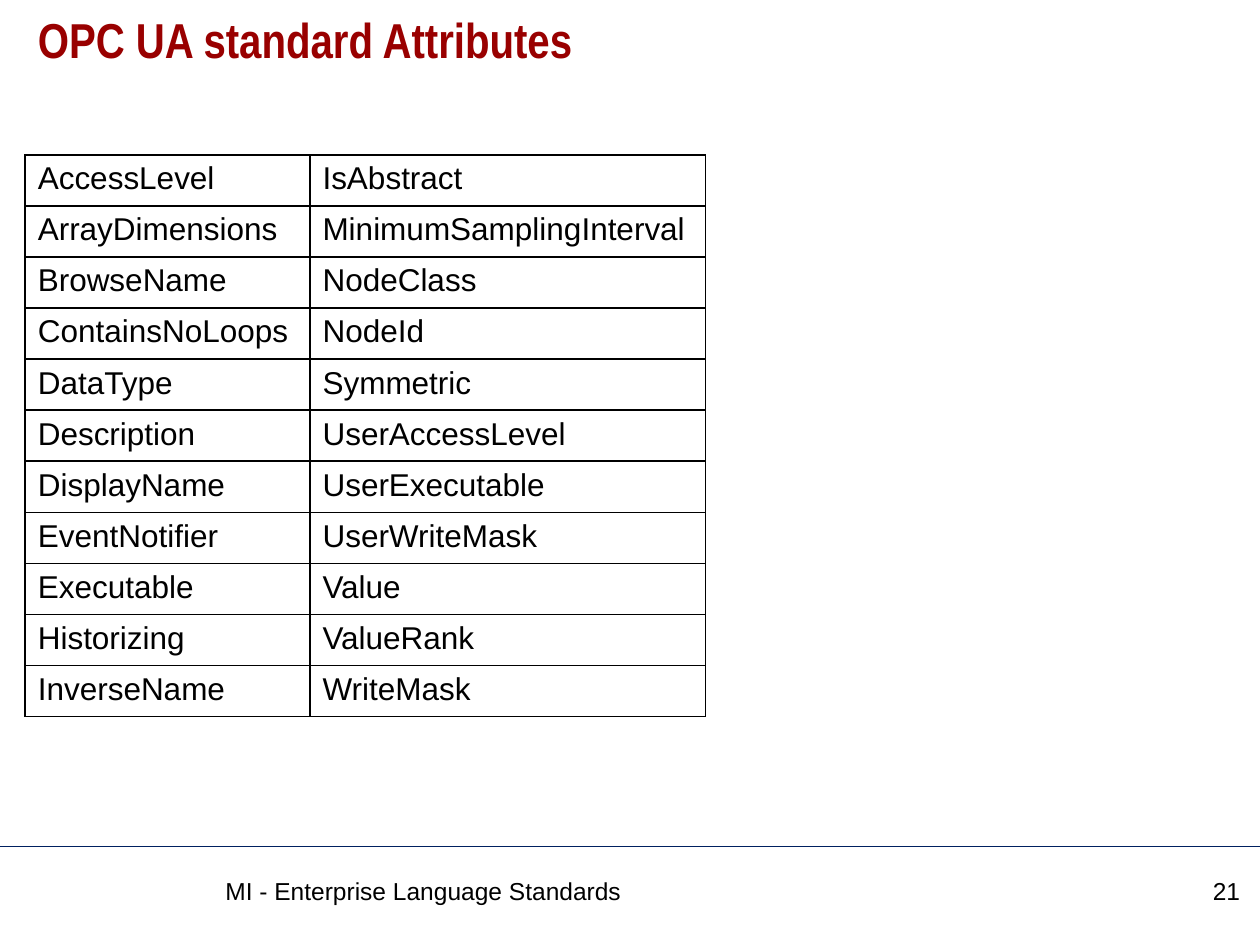
from lxml import etree
from pptx import Presentation
from pptx.dml.color import RGBColor
from pptx.enum.shapes import MSO_CONNECTOR
from pptx.enum.text import MSO_ANCHOR, PP_ALIGN
from pptx.oxml.ns import qn
from pptx.util import Inches, Pt

STRAIGHT = MSO_CONNECTOR.STRAIGHT
TOP = MSO_ANCHOR.TOP
LEFT, RIGHT = PP_ALIGN.LEFT, PP_ALIGN.RIGHT

PAGE_WIDTH, PAGE_HEIGHT = 10, 7.5
TITLE_FORMAT = {"name": "Arial Narrow", "size": Pt(28), "bold": True}
CELL_FORMAT = {"name": "Arial", "size": Pt(18), "bold": False}
FOOTER_FORMAT = {"name": "Arial", "size": Pt(14)}

ATTRIBUTES = [
    ("AccessLevel", "IsAbstract"),
    ("ArrayDimensions", "MinimumSamplingInterval"),
    ("BrowseName", "NodeClass"),
    ("ContainsNoLoops", "NodeId"),
    ("DataType", "Symmetric"),
    ("Description", "UserAccessLevel"),
    ("DisplayName", "UserExecutable"),
    ("EventNotifier", "UserWriteMask"),
    ("Executable", "Value"),
    ("Historizing", "ValueRank"),
    ("InverseName", "WriteMask"),
]


def color(value):
    return RGBColor.from_string(value)


def write(frame, text, formats, ink="000000", align=LEFT):
    """Put one formatted paragraph in a text frame."""
    frame.word_wrap = True
    frame.vertical_anchor = TOP
    para = frame.paragraphs[0]
    para.alignment = align
    span = para.add_run()
    span.text = text
    for name, value in formats.items():
        setattr(span.font, name, value)
    span.font.color.rgb = color(ink)
    return para


def add_title(page, box, text):
    title = page.shapes.title
    title.left, title.top, title.width, title.height = map(Inches, box)
    para = write(title.text_frame, text, TITLE_FORMAT, "990000")
    para.line_spacing = 0.9


def border_cell(cell, ink="000000", weight=Pt(1)):
    properties = cell._tc.get_or_add_tcPr()
    for side in ("a:lnL", "a:lnR", "a:lnT", "a:lnB"):
        line = etree.SubElement(properties, qn(side), w=str(weight))
        fill = etree.SubElement(line, qn("a:solidFill"))
        etree.SubElement(fill, qn("a:srgbClr"), val=ink)


def add_attribute_table(page, box, column_widths, rows):
    left, top, width, height = map(Inches, box)
    frame = page.shapes.add_table(len(rows), len(column_widths), left, top, width, height)
    table = frame.table
    table.first_row = table.horz_banding = False
    for column, column_width in zip(table.columns, column_widths):
        column.width = Inches(column_width)
    for row, names in zip(table.rows, rows):
        row.height = int(height / len(rows))
        for cell, name in zip(row.cells, names):
            border_cell(cell)
            cell.fill.background()
            cell.vertical_anchor = TOP
            write(cell.text_frame, name, CELL_FORMAT)


def add_footer(page, box, text, number):
    left, top, width, height = box
    # Rule across the page
    rule = page.shapes.add_connector(
        STRAIGHT, Inches(left), Inches(top), Inches(left + width), Inches(top))
    rule.line.color.rgb = color("002060")
    rule.line.width = Pt(0.75)
    etree.SubElement(rule._element.spPr, qn("a:effectLst"))
    # Footer text and page number
    for offset, label_width, label, align in (
            (1.69, 7.21, text, LEFT), (9.02, 0.92, number, RIGHT)):
        label_box = page.shapes.add_textbox(
            Inches(left + offset), Inches(top + 0.18), Inches(label_width), Inches(0.45))
        write(label_box.text_frame, label, FOOTER_FORMAT, align=align)


def main():
    deck = Presentation()
    deck.slide_width, deck.slide_height = Inches(PAGE_WIDTH), Inches(PAGE_HEIGHT)
    page = deck.slides.add_slide(deck.slide_layouts.get_by_name("Title Only"))
    add_title(page, (0.2, 0.08, 9.61, 0.83), "OPC UA standard Attributes")
    add_attribute_table(page, (0.2, 1.23, 5.4, 4.46), (2.26, 3.14), ATTRIBUTES)
    add_footer(page, (0, 6.72, PAGE_WIDTH, 0.78), "MI - Enterprise Language Standards", "21")
    deck.save("out.pptx")


if __name__ == "__main__":
    main()
